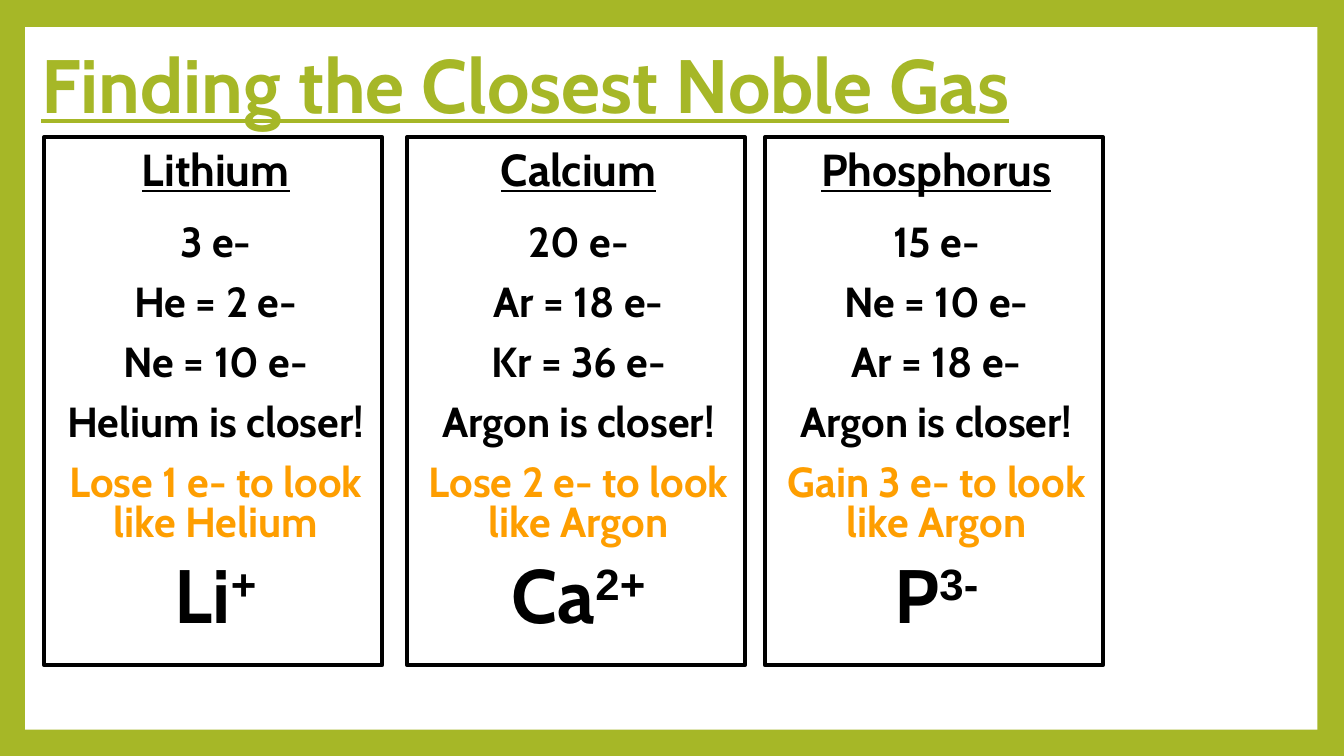
from dataclasses import dataclass

from pptx import Presentation
from pptx.dml.color import RGBColor
from pptx.enum.shapes import MSO_SHAPE
from pptx.enum.text import MSO_ANCHOR, MSO_AUTO_SIZE, PP_ALIGN
from pptx.util import Pt

RECT = MSO_SHAPE.RECTANGLE
MIDDLE, TOP = MSO_ANCHOR.MIDDLE, MSO_ANCHOR.TOP
NO_FIT = MSO_AUTO_SIZE.NONE
LEFT, CENTER = PP_ALIGN.LEFT, PP_ALIGN.CENTER

TITLE = "Finding the Closest Noble Gas"
ELEMENTS = [
    {"name": "Lithium", "left": 31.7, "electrons": "3 e-",
     "steps": ["He = 2 e-", "Ne = 10 e-", "Helium is closer!"],
     "answer": "Lose 1 e- to look like Helium", "ion": ("Li", "+")},
    {"name": "Calcium", "left": 290.9, "electrons": "20 e-",
     "steps": ["Ar = 18 e-", "Kr = 36 e-", "Argon is closer!"],
     "answer": "Lose 2 e- to look like Argon", "ion": ("Ca", "2+")},
    {"name": "Phosphorus", "left": 546.5, "electrons": "15 e-",
     "steps": ["Ne = 10 e-", "Ar = 18 e-", "Argon is closer!"],
     "answer": "Gain 3 e- to look like Argon", "ion": ("P", "3-")},
]


@dataclass(frozen=True)
class Theme:
    green: RGBColor = RGBColor(0xA6, 0xB7, 0x27)
    white: RGBColor = RGBColor(0xFF, 0xFF, 0xFF)
    black: RGBColor = RGBColor(0, 0, 0)
    orange: RGBColor = RGBColor(0xFE, 0x9E, 0x00)
    font: str = "Cabin"
    charge_font: str = "Arial"
    large: int = 54
    heading: int = 32
    body: int = 30


THEME = Theme()


def set_font(font, size, color, underline=False):
    font.name = THEME.font
    font.size = Pt(size)
    font.color.rgb = color
    font.bold = True
    font.underline = underline


def add_rect(slide, left, top, width, height):
    sp = slide.shapes.add_shape(RECT, Pt(left), Pt(top), Pt(width), Pt(height))
    sp.shadow.inherit = False
    return sp


def add_panel(slide):
    sp = add_rect(slide, 18, 19.4, 923, 501.8)
    sp.fill.solid()
    sp.fill.fore_color.rgb = THEME.white
    sp.line.fill.background()
    slide.shapes._spTree.insert(2, sp._element)


def add_title(slide):
    sp = slide.shapes.title
    sp.left, sp.top, sp.width, sp.height = Pt(22.3), Pt(10.1), Pt(777.6), Pt(106.6)
    tf = sp.text_frame
    tf.text = TITLE
    tf.word_wrap = True
    tf.auto_size = NO_FIT
    tf.vertical_anchor = MIDDLE
    p = tf.paragraphs[0]
    p.alignment = LEFT
    p.line_spacing = 0.9
    set_font(p.font, THEME.large, THEME.green, True)


def add_card(slide, element):
    sp = add_rect(slide, element["left"], 97.9, 241.2, 377.3)
    sp.fill.background()
    sp.line.color.rgb = THEME.black
    sp.line.width = Pt(3)
    tf = sp.text_frame
    tf.word_wrap = True
    tf.vertical_anchor = TOP

    symbol, charge = element["ion"]
    lines = [(element["name"], THEME.heading, THEME.black, 1.0)]
    lines.append((element["electrons"], THEME.body, THEME.black, 1.0))
    lines += [(step, THEME.body, THEME.black, 0.8) for step in element["steps"]]
    lines.append((element["answer"], THEME.body, THEME.orange, 0.8))
    lines.append((symbol, THEME.large, THEME.black, 0.8))

    for i, (text, size, color, spacing) in enumerate(lines):
        p = tf.add_paragraph() if i else tf.paragraphs[0]
        p.alignment = CENTER
        p.line_spacing = spacing
        p.space_before = Pt(14 if i else 0)
        p._p.get_or_add_pPr().set("marL", str(Pt(3.6)))
        p.add_run().text = text
        set_font(p.font, size, color, i == 0)

    r = p.add_run()
    r.text = charge
    r.font.name = THEME.charge_font
    r._r.get_or_add_rPr().set("baseline", "30000")


def main():
    prs = Presentation()
    prs.slide_width, prs.slide_height = Pt(960), Pt(540)
    slide = prs.slides.add_slide(prs.slide_layouts[5])
    slide.background.fill.solid()
    slide.background.fill.fore_color.rgb = THEME.green
    add_panel(slide)
    add_title(slide)
    for element in ELEMENTS:
        add_card(slide, element)
    prs.save("out.pptx")


if __name__ == "__main__":
    main()
